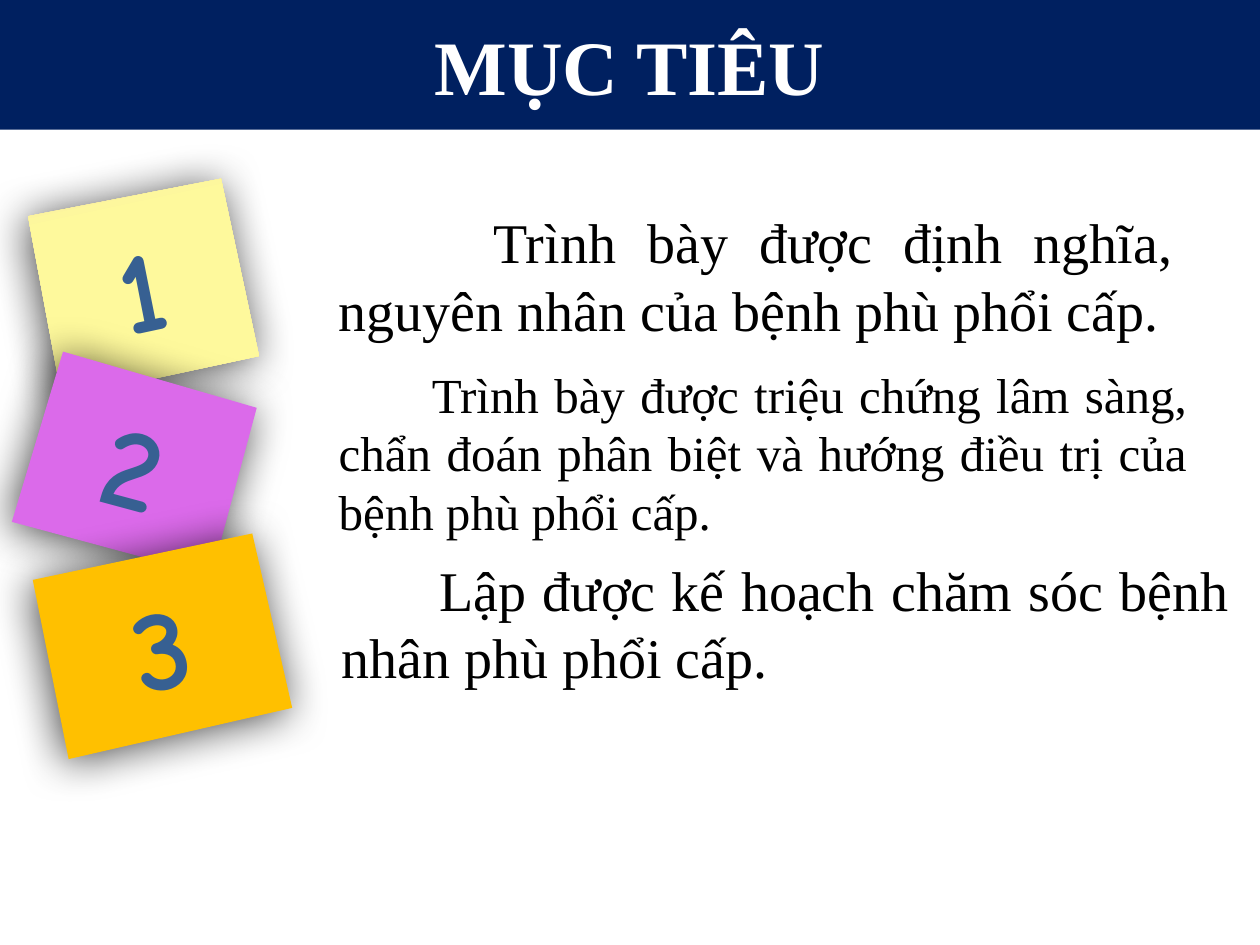
from lxml import etree
from pptx import Presentation
from pptx.dml.color import RGBColor
from pptx.enum.text import MSO_ANCHOR, MSO_AUTO_SIZE, PP_ALIGN
from pptx.oxml import parse_xml
from pptx.util import Inches, Pt

SERIF = "Times New Roman"
SHADOW = """<a:effectLst xmlns:a="http://schemas.openxmlformats.org/drawingml/2006/main">
  <a:outerShdw blurRad="317500" dist="38100" dir="8100000" algn="ctr" rotWithShape="0">
    <a:srgbClr val="000000"><a:alpha val="70000"/></a:srgbClr>
  </a:outerShdw>
</a:effectLst>"""


def rgb(color):
    return RGBColor.from_string(color)


def add_run(p, text, size, font, color, bold=False):
    r = p.add_run()
    r.text = text
    r.font.size = Pt(size)
    r.font.name = font
    r.font.bold = bold
    r.font.color.rgb = rgb(color)


prs = Presentation()
prs.slide_width, prs.slide_height = Inches(10), Inches(7.5)
s = prs.slides.add_slide(prs.slide_layouts[5])

# Title band
title = s.shapes.title
title.left, title.top = Inches(0), Inches(0)
title.width, title.height = Inches(10), Inches(1.03)
title.fill.solid()
title.fill.fore_color.rgb = rgb("002060")
title.text_frame.vertical_anchor = MSO_ANCHOR.MIDDLE
p = title.text_frame.paragraphs[0]
p.alignment = PP_ALIGN.CENTER
add_run(p, "MỤC TIÊU", 44, SERIF, "FFFFFF", bold=True)

# Numbered sticky notes: left, top, width, height, rotation, colour
notes = [
    (0.32, 1.54, 1.60, 1.47, -12.1, "FEF99C"),
    (0.25, 2.97, 1.64, 1.41, 15.1, "DB6AEA"),
    (0.36, 4.39, 1.82, 1.45, -12.9, "FFC000"),
]
group = s.shapes.add_group_shape()
for number, (x, y, w, h, angle, color) in enumerate(notes, 1):
    corners = [(0.04, 0), (w, 0.03), (w, h), (0, h)]
    points = [(Inches(x + dx), Inches(y + dy)) for dx, dy in corners]
    builder = group.shapes.build_freeform(*points[0])
    builder.add_line_segments(points[1:], close=True)
    sp = builder.convert_to_shape()
    sp.rotation = angle
    if number == 1:
        sp.fill.gradient()
        sp.fill.gradient_angle = 270
        for stop, (pos, tint) in zip(sp.fill.gradient_stops, [(0, "F6E7A6"), (0.21, color)]):
            stop.position = pos
            stop.color.rgb = rgb(tint)
    else:
        sp.fill.solid()
        sp.fill.fore_color.rgb = rgb(color)
    sp.line.fill.background()
    sp._element.spPr.append(parse_xml(SHADOW))
    tf = sp.text_frame
    tf.vertical_anchor = MSO_ANCHOR.MIDDLE
    tf.margin_left = tf.margin_right = tf.margin_top = tf.margin_bottom = Inches(0.05)
    p = tf.paragraphs[0]
    p.alignment = PP_ALIGN.CENTER
    add_run(p, str(number), 66, "Comic Neue", "376092", bold=True)

# Objectives: left, top, width, height, first-line indent, size, text
objectives = [
    (2.59, 1.60, 6.82, 1.18, 1.23, 32,
     "Trình bày được định nghĩa, nguyên nhân của bệnh phù phổi cấp."),
    (2.59, 2.84, 6.93, 1.51, 0.74, 28,
     "Trình bày được triệu chứng lâm sàng, chẩn đoán phân biệt và hướng điều trị "
     "của bệnh phù phổi cấp."),
    (2.61, 4.36, 7.25, 1.18, 0.78, 32,
     "Lập được kế hoạch chăm sóc bệnh nhân phù phổi cấp."),
]
for x, y, w, h, indent, size, text in objectives:
    tf = s.shapes.add_textbox(Inches(x), Inches(y), Inches(w), Inches(h)).text_frame
    tf.word_wrap = True
    tf.auto_size = MSO_AUTO_SIZE.SHAPE_TO_FIT_TEXT
    p = tf.paragraphs[0]
    p.alignment = PP_ALIGN.JUSTIFY
    p._p.get_or_add_pPr().set("indent", str(Inches(indent)))
    add_run(p, text, size, SERIF, "000000")

prs.save("out.pptx")
